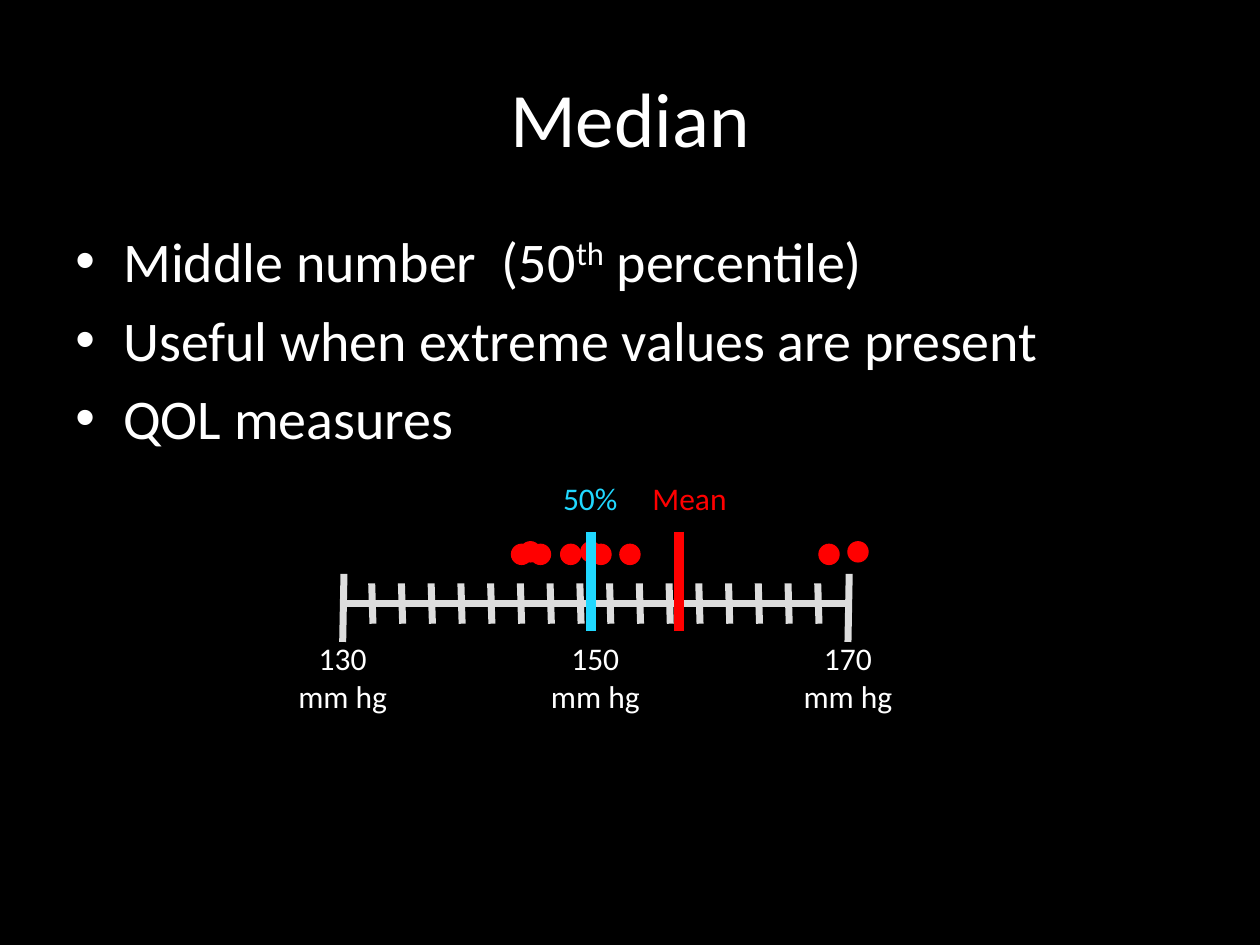
from lxml.etree import SubElement
from pptx import Presentation
from pptx.dml.color import RGBColor
from pptx.enum.shapes import MSO_CONNECTOR as Connector, MSO_SHAPE as Shape
from pptx.enum.text import MSO_ANCHOR as Anchor, PP_ALIGN as Align
from pptx.oxml.ns import qn
from pptx.util import Inches, Pt

BLACK = RGBColor(0x00, 0x00, 0x00)
WHITE = RGBColor(0xFF, 0xFF, 0xFF)
GREY = RGBColor(0xDD, 0xDD, 0xDD)
RED = RGBColor(0xFF, 0x00, 0x00)
CYAN = RGBColor(0x20, 0xD8, 0xFF)

COLUMNS, ROWS = 100, 75


class Board:
    font = "Calibri"
    dot_size = 1.6

    def __init__(self, deck):
        self.column = deck.slide_width / COLUMNS
        self.row = deck.slide_height / ROWS
        self.page = deck.slides.add_slide(deck.slide_layouts[6])
        fill = self.page.background.fill
        fill.solid()
        fill.fore_color.rgb = BLACK

    def place(self, left, top, width, height):
        return (round(left * self.column), round(top * self.row),
                round(width * self.column), round(height * self.row))

    def style(self, span, size, color):
        span.font.name = self.font
        span.font.size = Pt(size)
        span.font.color.rgb = color

    def text(self, area, words, size, color=WHITE, align=Align.LEFT, anchor=Anchor.TOP):
        box = self.page.shapes.add_textbox(*self.place(*area))
        frame = box.text_frame
        frame.word_wrap = True
        frame.vertical_anchor = anchor
        frame.text = words
        for para in frame.paragraphs:
            para.alignment = align
            for span in para.runs:
                self.style(span, size, color)
        return frame

    def bullets(self, area, items, size):
        frame = self.text(area, "\n".join("".join(parts) for parts in items), size)
        for para, parts in zip(frame.paragraphs, items):
            para.space_before = Pt(size * 0.2)
            props = para._p.get_or_add_pPr()
            props.set("marL", str(Inches(0.38)))
            props.set("indent", str(Inches(-0.38)))
            SubElement(props, qn("a:buFont")).set("typeface", "Arial")
            SubElement(props, qn("a:buChar")).set("char", "•")
            if len(parts) > 1:
                para.runs[0].text = parts[0]
                raised, rest = para.add_run(), para.add_run()
                raised.text, rest.text = parts[1:]
                for span in (raised, rest):
                    self.style(span, size, WHITE)
                raised._r.get_or_add_rPr().set("baseline", "30000")

    def line(self, start, end, color=GREY, width=4):
        ends = self.place(*start, *end)
        link = self.page.shapes.add_connector(Connector.STRAIGHT, *ends)
        link.line.color.rgb = color
        link.line.width = Pt(width)
        SubElement(link._element.spPr, qn("a:effectLst"))

    def dot(self, left, top):
        area = self.place(left, top, self.dot_size, self.dot_size)
        dot = self.page.shapes.add_shape(Shape.OVAL, *area)
        dot.shadow.inherit = False
        dot.fill.solid()
        dot.fill.fore_color.rgb = RED
        dot.line.color.rgb = RED
        dot.line.width = Pt(0.75)


def main():
    deck = Presentation()
    deck.slide_width, deck.slide_height = Inches(10), Inches(7.5)
    board = Board(deck)

    board.text((5, 3, 90, 12.5), "Median", 44, align=Align.CENTER, anchor=Anchor.MIDDLE)
    board.bullets((5, 17.5, 90, 49.5), [
        ("Middle number  (50", "th", " percentile)"),
        ("Useful when extreme values are present",),
        ("QOL measures",),
    ], 32)

    axis_start, axis_end = 27.2, 67.3
    board.line((axis_start, 47.9), (axis_end, 47.9))
    for end in (axis_start, axis_end):
        board.line((end + 0.1, 45.55), (end, 50.95))
    for index in range(16):
        tick = 29.5 + 2.36 * index
        board.line((tick, 46.3), (tick + 0.1, 49.5))

    for index, value in enumerate((130, 150, 170)):
        center = axis_start + index * (axis_end - axis_start) / 2
        board.text((center - 6, 50.2, 12, 7.1), f"{value}\nmm hg", 18, align=Align.CENTER)

    for left in (40.6, 42.1, 44.5, 46.9, 49.2, 65):
        board.dot(left, 43.2)
    for left in (41.3, 46.1, 67.3):
        board.dot(left, 43)

    for center, left, width, words, color in (
        (46.9, 43.7, 7.1, "50%", CYAN),
        (53.9, 50.8, 11, "Mean", RED),
    ):
        board.line((center, 42.2), (center, 50.1), color, 6)
        board.text((left, 37.5, width, 4), words, 18, color)

    deck.save("out.pptx")


if __name__ == "__main__":
    main()
